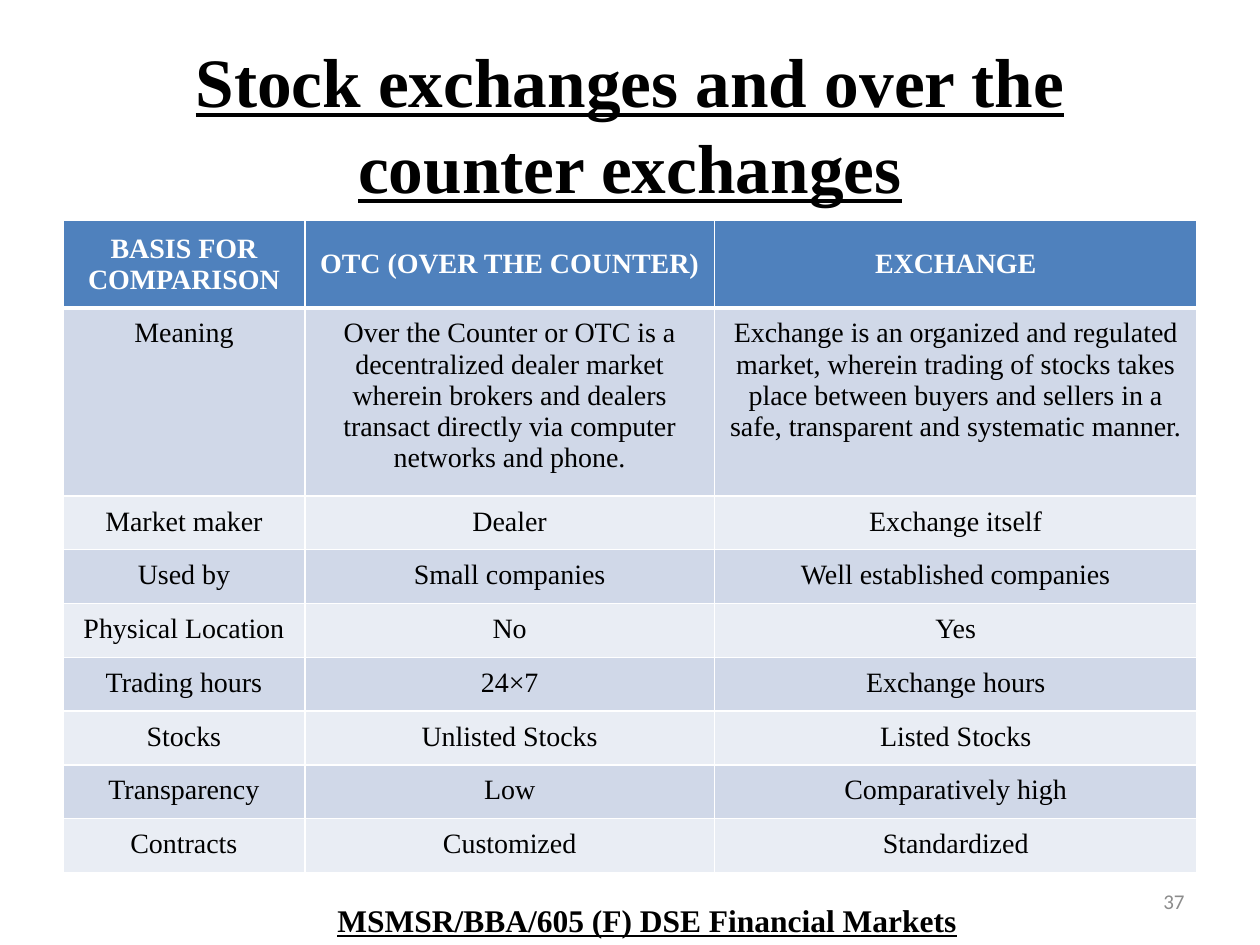
import lxml.etree
import pptx
import pptx.dml.color
import pptx.enum.text
import pptx.oxml.ns
import pptx.util

Inches, Pt = pptx.util.Inches, pptx.util.Pt
ALIGN, ANCHOR = pptx.enum.text.PP_ALIGN, pptx.enum.text.MSO_ANCHOR
COLORS = {"black": "000000", "white": "FFFFFF", "gray": "8C8C8C",
          "header": "4F81BD", "band_dark": "D0D8E8", "band_light": "E9EDF4"}
SERIF = "Times New Roman"
MARGIN = 0.5
COLUMN_WIDTHS = [1.92, 3.25, 3.83]
ROW_HEIGHT = 0.41
CELL_INSET = Inches(0.08)
ROWS = [
    ("BASIS FOR COMPARISON", "OTC (OVER THE COUNTER)", "EXCHANGE"),
    ("Meaning",
     "Over the Counter or OTC is a decentralized dealer market wherein brokers "
     "and dealers transact directly via computer networks and phone.",
     "Exchange is an organized and regulated market, wherein trading of stocks takes "
     "place between buyers and sellers in a safe, transparent and systematic manner."),
    ("Market maker", "Dealer", "Exchange itself"),
    ("Used by", "Small companies", "Well established companies"),
    ("Physical Location", "No", "Yes"),
    ("Trading hours", "24×7", "Exchange hours"),
    ("Stocks", "Unlisted Stocks", "Listed Stocks"),
    ("Transparency", "Low", "Comparatively high"),
    ("Contracts", "Customized", "Standardized"),
]


def write_text(text_frame, text, align, color, **font_format):
    paragraph = text_frame.paragraphs[0]
    paragraph.alignment = align
    run = paragraph.add_run()
    run.text = text
    run.font.color.rgb = pptx.dml.color.RGBColor.from_string(COLORS[color])
    for name, value in font_format.items():
        setattr(run.font, name, value)


def add_border(cell, side, points):
    """Draw a white border; call before the cell is filled, as the schema orders it."""
    qn = pptx.oxml.ns.qn
    properties = cell._tc.get_or_add_tcPr()
    line = lxml.etree.SubElement(properties, qn(f"a:ln{side}"), w=str(Pt(points)))
    fill = lxml.etree.SubElement(line, qn("a:solidFill"))
    lxml.etree.SubElement(fill, qn("a:srgbClr"), val=COLORS["white"])


presentation = pptx.Presentation()
presentation.slide_width, presentation.slide_height = Inches(10), Inches(7.5)
slide = presentation.slides.add_slide(presentation.slide_layouts[6])

# Title, page number and footer
heading = {"name": SERIF, "bold": True, "underline": True}
texts = [
    ("Stock exchanges and over the counter exchanges", (MARGIN, 0.3, 9, 1.25),
     {"word_wrap": True, "vertical_anchor": ANCHOR.MIDDLE, "margin_top": Inches(0.12)},
     ALIGN.CENTER, "black", {"size": Pt(39.6), **heading}),
    ("37", (7.17, 6.95, 2.33, 0.4),
     {"word_wrap": True, "vertical_anchor": ANCHOR.MIDDLE},
     ALIGN.RIGHT, "gray", {"size": Pt(12), "name": "Calibri"}),
    ("MSMSR/BBA/605 (F) DSE Financial Markets", (2.58, 7.1, 5.17, 0.4),
     {"word_wrap": False, "auto_size": pptx.enum.text.MSO_AUTO_SIZE.SHAPE_TO_FIT_TEXT},
     ALIGN.LEFT, "black", {"size": Pt(18), **heading}),
]
for text, box, frame_format, align, color, font_format in texts:
    text_frame = slide.shapes.add_textbox(*map(Inches, box)).text_frame
    for name, value in frame_format.items():
        setattr(text_frame, name, value)
    write_text(text_frame, text, align, color, **font_format)
slide.shapes[0].text_frame.paragraphs[0].line_spacing = 1.04

# Comparison table; rows grow to fit their text
table_shape = slide.shapes.add_table(
    len(ROWS), len(COLUMN_WIDTHS), Inches(MARGIN), Inches(1.75),
    Inches(sum(COLUMN_WIDTHS)), Inches(ROW_HEIGHT * len(ROWS)))
table = table_shape.table
for column, width in zip(table.columns, COLUMN_WIDTHS):
    column.width = Inches(width)

for row_index, row in enumerate(ROWS):
    table.rows[row_index].height = Inches(ROW_HEIGHT)
    is_header = row_index == 0
    band = "header" if is_header else ("band_light", "band_dark")[row_index % 2]
    borders = {"L": 1, "R": 1, "T": 3 if row_index == 1 else 1, "B": 3 if is_header else 1}
    for column_index, text in enumerate(row):
        cell = table.cell(row_index, column_index)
        for side, points in borders.items():
            add_border(cell, side, points)
        cell.fill.solid()
        cell.fill.fore_color.rgb = pptx.dml.color.RGBColor.from_string(COLORS[band])
        for side in ("left", "right", "top", "bottom"):
            setattr(cell, f"margin_{side}", CELL_INSET)
        cell.vertical_anchor = ANCHOR.MIDDLE if is_header else ANCHOR.TOP
        write_text(cell.text_frame, text, ALIGN.CENTER, "white" if is_header else "black",
                   size=Pt(16), name=SERIF, bold=is_header)

presentation.save("out.pptx")
